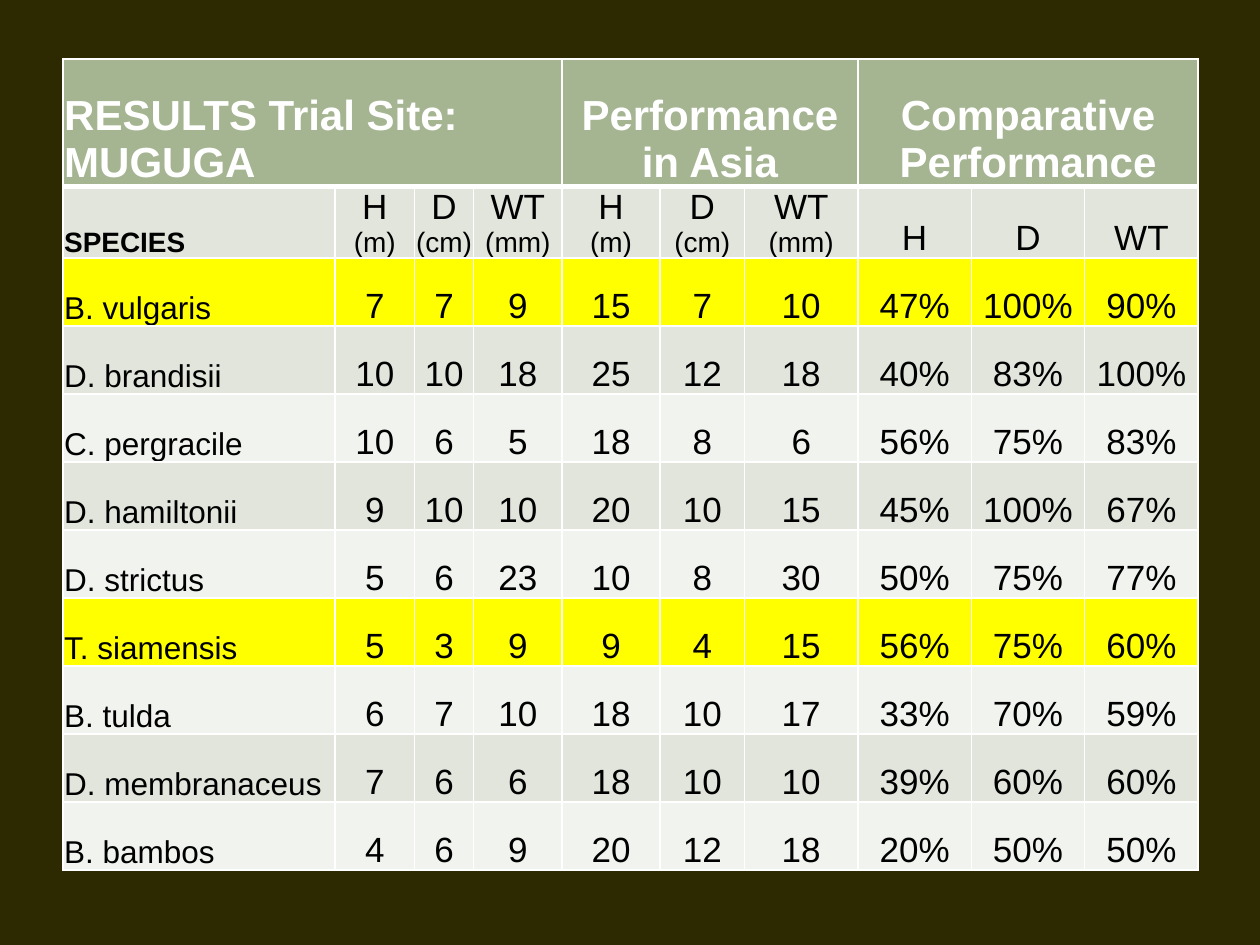
from dataclasses import dataclass

from lxml import etree
from pptx import Presentation
from pptx import util as u
from pptx.dml.color import RGBColor
from pptx.enum import text
from pptx.oxml import ns


@dataclass(frozen=True)
class Theme:
    font: str = "Arial"
    background: str = "2D2901"
    header: str = "A5B592"
    bands: tuple = ("E1E5DC", "F0F3EE")
    highlight: str = "FFFF00"
    light: str = "FFFFFF"
    dark: str = "000000"
    header_size: int = 24
    value_size: int = 20
    species_size: int = 18
    small_size: int = 16
    rule: int = 1
    header_rule: int = 3


THEME = Theme()
SLIDE_WIDTH, SLIDE_HEIGHT = 10, 7.5
LEFT, TOP = 0.5, 0.47
COLUMN_WIDTHS = [2.16, 0.63, 0.47, 0.7, 0.78, 0.67] + [0.9] * 4
HEADER_HEIGHT, ROW_HEIGHT = 1.01, 0.54

# Each group: lines of text, first column, last column
GROUPS = [
    (["RESULTS Trial Site: MUGUGA"], 0, 3),
    (["Performance", "in Asia"], 4, 6),
    (["Comparative", "Performance"], 7, 9),
]
MEASURES = ["H", "D", "WT"]
UNITS = ["(m)", "(cm)", "(mm)"]
RESULTS = [
    ("B. vulgaris", 7, 7, 9, 15, 7, 10, "47%", "100%", "90%"),
    ("D. brandisii", 10, 10, 18, 25, 12, 18, "40%", "83%", "100%"),
    ("C. pergracile", 10, 6, 5, 18, 8, 6, "56%", "75%", "83%"),
    ("D. hamiltonii", 9, 10, 10, 20, 10, 15, "45%", "100%", "67%"),
    ("D. strictus", 5, 6, 23, 10, 8, 30, "50%", "75%", "77%"),
    ("T. siamensis", 5, 3, 9, 9, 4, 15, "56%", "75%", "60%"),
    ("B. tulda", 6, 7, 10, 18, 10, 17, "33%", "70%", "59%"),
    ("D. membranaceus", 7, 6, 6, 18, 10, 10, "39%", "60%", "60%"),
    ("B. bambos", 4, 6, 9, 20, 12, 18, "20%", "50%", "50%"),
]
HIGHLIGHTED = {"B. vulgaris", "T. siamensis"}


def paint(fill, color):
    fill.solid()
    fill.fore_color.rgb = RGBColor.from_string(color)


def add_borders(cell, top, bottom):
    """Rule all four sides; must run before the cell is filled."""
    properties = cell._tc.get_or_add_tcPr()
    sides = {"L": THEME.rule, "R": THEME.rule, "T": top, "B": bottom}
    for side, width in sides.items():
        line = etree.SubElement(properties, ns.qn(f"a:ln{side}"), w=str(u.Pt(width)))
        solid = etree.SubElement(line, ns.qn("a:solidFill"))
        etree.SubElement(solid, ns.qn("a:srgbClr"), val=THEME.light)


def style_cell(cell, row, color):
    add_borders(
        cell,
        top=THEME.header_rule if row == 1 else THEME.rule,
        bottom=THEME.header_rule if row == 0 else THEME.rule,
    )
    paint(cell.fill, color)
    cell.vertical_anchor = text.MSO_ANCHOR.BOTTOM
    cell.margin_left = cell.margin_right = cell.margin_top = u.Inches(0.01)
    cell.margin_bottom = 0


def write(cell, lines, sizes, centered=True, bold=False, color=THEME.dark):
    cell.text_frame.text = "\n".join(lines)
    for paragraph, size in zip(cell.text_frame.paragraphs, sizes):
        paragraph.alignment = text.PP_ALIGN.CENTER if centered else text.PP_ALIGN.LEFT
        for run in paragraph.runs:
            run.font.name = THEME.font
            run.font.size = u.Pt(size)
            run.font.bold = bold
            run.font.color.rgb = RGBColor.from_string(color)


def row_color(row):
    if row == 0:
        return THEME.header
    if row > 1 and RESULTS[row - 2][0] in HIGHLIGHTED:
        return THEME.highlight
    return THEME.bands[(row - 1) % 2]


def add_grid(slide):
    row_count = len(RESULTS) + 2
    heights = [HEADER_HEIGHT] + [ROW_HEIGHT] * (row_count - 1)
    table = slide.shapes.add_table(
        row_count, len(COLUMN_WIDTHS), u.Inches(LEFT), u.Inches(TOP),
        u.Inches(sum(COLUMN_WIDTHS)), u.Inches(sum(heights)),
    ).table
    table.horz_banding = False
    for column, width in zip(table.columns, COLUMN_WIDTHS):
        column.width = u.Inches(width)
    for index, (row, height) in enumerate(zip(table.rows, heights)):
        row.height = u.Inches(height)
        for cell in row.cells:
            style_cell(cell, index, row_color(index))
    return table


def write_group_headers(table):
    for lines, first, last in GROUPS:
        cell = table.cell(0, first)
        cell.merge(table.cell(0, last))
        write(cell, lines, [THEME.header_size] * len(lines),
              centered=first > 0, bold=True, color=THEME.light)


def write_measure_headers(table):
    write(table.cell(1, 0), ["SPECIES"], [THEME.small_size], centered=False, bold=True)
    comparative_start = GROUPS[-1][1]
    for column in range(1, len(COLUMN_WIDTHS)):
        measure = (column - 1) % len(MEASURES)
        lines = [MEASURES[measure]]
        if column < comparative_start:
            lines.append(UNITS[measure])
        write(table.cell(1, column), lines, [THEME.value_size, THEME.small_size])


def write_results(table):
    for row, (species, *values) in enumerate(RESULTS, start=2):
        write(table.cell(row, 0), [species], [THEME.species_size], centered=False)
        for column, value in enumerate(values, start=1):
            write(table.cell(row, column), [str(value)], [THEME.value_size])


def main():
    deck = Presentation()
    deck.slide_width = u.Inches(SLIDE_WIDTH)
    deck.slide_height = u.Inches(SLIDE_HEIGHT)
    slide = deck.slides.add_slide(deck.slide_layouts.get_by_name("Blank"))
    paint(slide.background.fill, THEME.background)
    table = add_grid(slide)
    write_group_headers(table)
    write_measure_headers(table)
    write_results(table)
    deck.save("out.pptx")


if __name__ == "__main__":
    main()
